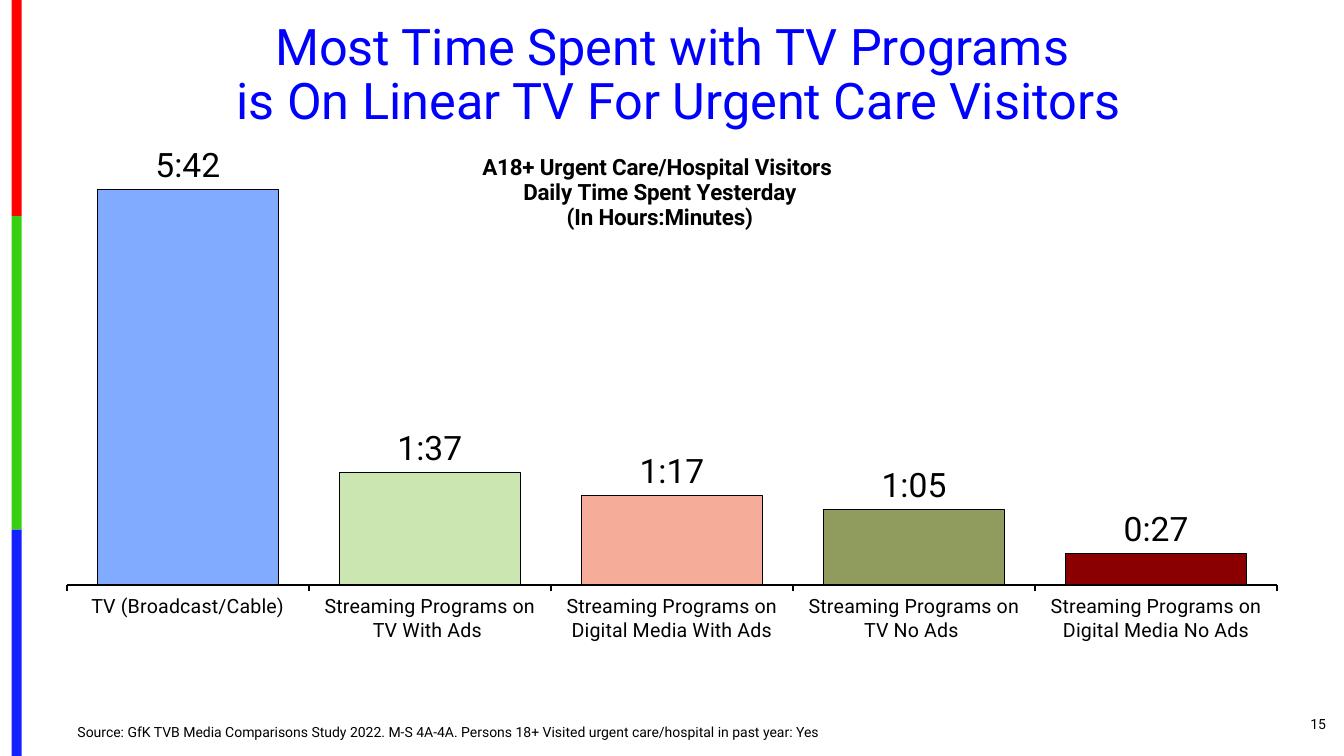
from lxml import etree
from pptx import Presentation, util as u
from pptx.chart.data import CategoryChartData
from pptx.dml.color import RGBColor
from pptx.enum import chart as ch, shapes, text
from pptx.oxml import parse_xml
from pptx.oxml.ns import nsdecls

HUES = {
    "red": "FE0000", "green": "36CF12", "blue": "1322FE",
    "title": "0000FF", "ink": "000000",
    "sky": "80ABFF", "mint": "CCE6B2", "peach": "F5AD99",
    "olive": "909C5E", "wine": "8A0000",
}
COLS, ROWS = 133.3, 75  # one cell is a tenth of an inch

# Category, share of a day (drawn as hours and minutes), colour
TIMES = [
    ("TV (Broadcast/Cable)", 0.2375, "sky"),
    ("Streaming Programs on TV With Ads ", 0.0674, "mint"),
    ("Streaming Programs on Digital Media With Ads", 0.0535, "peach"),
    ("Streaming Programs on TV No Ads ", 0.0452, "olive"),
    ("Streaming Programs on Digital Media No Ads", 0.0188, "wine"),
]


class Deck:
    face = "Roboto"

    def __init__(self):
        self.prs = Presentation()
        self.prs.slide_width = u.Inches(13.33)
        self.prs.slide_height = u.Inches(7.5)
        self.slide = self.prs.slides.add_slide(self.prs.slide_layouts[6])

    def box(self, x, y, w, h):
        """Turn columns and rows into slide lengths."""
        wide = self.prs.slide_width / COLS
        high = self.prs.slide_height / ROWS
        return int(x * wide), int(y * high), int(w * wide), int(h * high)

    def hue(self, name):
        return RGBColor.from_string(HUES[name])

    def style(self, font, size, hue="ink", bold=False):
        font.name, font.size, font.bold = self.face, u.Pt(size), bold
        font.color.rgb = self.hue(hue)

    def band(self, area, hue):
        shape = self.slide.shapes.add_shape(shapes.MSO_SHAPE.RECTANGLE, *self.box(*area))
        shape.shadow.inherit = False
        shape.fill.solid()
        shape.fill.fore_color.rgb = self.hue(hue)
        shape.line.fill.background()

    def text(self, area, words, size, hue="ink", align="LEFT", anchor="MIDDLE", space=1.0):
        frame = self.slide.shapes.add_textbox(*self.box(*area)).text_frame
        frame.word_wrap = True
        frame.vertical_anchor = text.MSO_ANCHOR[anchor]
        frame.text = words
        for para in frame.paragraphs:
            para.alignment = text.PP_ALIGN[align]
            para.line_spacing = space
            for run in para.runs:
                self.style(run.font, size, hue)

    def layout(self, kind, **parts):
        """Build a manual chart layout from percentages of the chart's size."""
        node = parse_xml(f"<c:layout {nsdecls('c')}><c:manualLayout/></c:layout>")
        spot = node[0]
        tag = "{" + node.nsmap["c"] + "}"
        if kind:
            etree.SubElement(spot, tag + "layoutTarget", val=kind)
        for key in "xy":
            etree.SubElement(spot, tag + key + "Mode", val="edge")
        for key, part in parts.items():
            etree.SubElement(spot, tag + key, val=f"{part / 100:.4f}")
        return node

    def place(self, host, node, index):
        for old in host.findall(node.tag):
            host.remove(old)
        host.insert(index, node)

    def columns(self, area, rows, lines):
        data = CategoryChartData(number_format="h:mm;@")
        data.categories = [row[0] for row in rows]
        data.add_series("Series 1", [row[1] for row in rows])
        chart = self.slide.shapes.add_chart(
            ch.XL_CHART_TYPE.COLUMN_CLUSTERED, *self.box(*area), data).chart
        self.style(chart.font, 10)
        chart.has_legend = False

        # Heading inside the chart
        frame = chart.chart_title.text_frame
        frame.text = "\n".join(lines)
        for para in frame.paragraphs:
            for run in para.runs:
                self.style(run.font, 16, bold=True)
        chart.chart_title.include_in_layout = False
        head = chart.chart_title._element
        self.place(head, self.layout(None, x=34.4, y=6), 1)

        # Axes
        value = chart.value_axis
        value.minimum_scale, value.maximum_scale = 0, 0.25
        value.has_major_gridlines = False
        value.visible = False
        axis = chart.category_axis
        axis.major_tick_mark = ch.XL_TICK_MARK.OUTSIDE
        axis.format.line.color.rgb = self.hue("ink")
        axis.format.line.width = u.Pt(1.5)
        self.style(axis.tick_labels.font, 14)

        # Bars and their labels
        plot = chart.plots[0]
        plot.gap_width = 34
        plot.vary_by_categories = False
        for index, row in enumerate(rows):
            look = plot.series[0].points[index].format
            look.fill.solid()
            look.fill.fore_color.rgb = self.hue(row[2])
            look.line.color.rgb = self.hue("ink")
            look.line.width = u.Pt(0.75)
        plot.has_data_labels = True
        labels = plot.data_labels
        labels.show_value = True
        labels.number_format = "h:mm;@"
        labels.number_format_is_linked = False
        labels.position = ch.XL_LABEL_POSITION.OUTSIDE_END
        self.style(labels.font, 24)

        spot = self.layout("inner", x=1, y=9.3, w=98, h=75.8)
        self.place(chart._chartSpace.chart.plotArea, spot, 0)


def main():
    deck = Deck()

    # Side stripe
    top = 0
    for hue, high in (("red", 21.45), ("green", 31.1), ("blue", 22.45)):
        deck.band((1.15, top, 1, high), hue)
        top += high

    # Title
    deck.text((4.6, 1.6, 124.2, 11.9),
              "Most Time Spent with TV Programs\v is On Linear TV For Urgent Care Visitors",
              36, "title", "CENTER", space=0.9)

    # Chart
    deck.columns((5.4, 11.66, 122.5, 54.5), TIMES,
                 ["A18+ Urgent Care/Hospital Visitors ",
                  "Daily Time Spent Yesterday", "(In Hours:Minutes)"])

    # Source and page number
    deck.text((6.7, 71.5, 94.2, 2.5),
              "Source: GfK TVB Media Comparisons Study 2022. M-S 4A-4A. "
              "Persons 18+ Visited urgent care/hospital in past year: Yes",
              10, anchor="BOTTOM", space=0.9)
    deck.text((121.7, 69.8, 10.8, 4), "15", 10, align="RIGHT")

    deck.prs.save("out.pptx")


if __name__ == "__main__":
    main()
